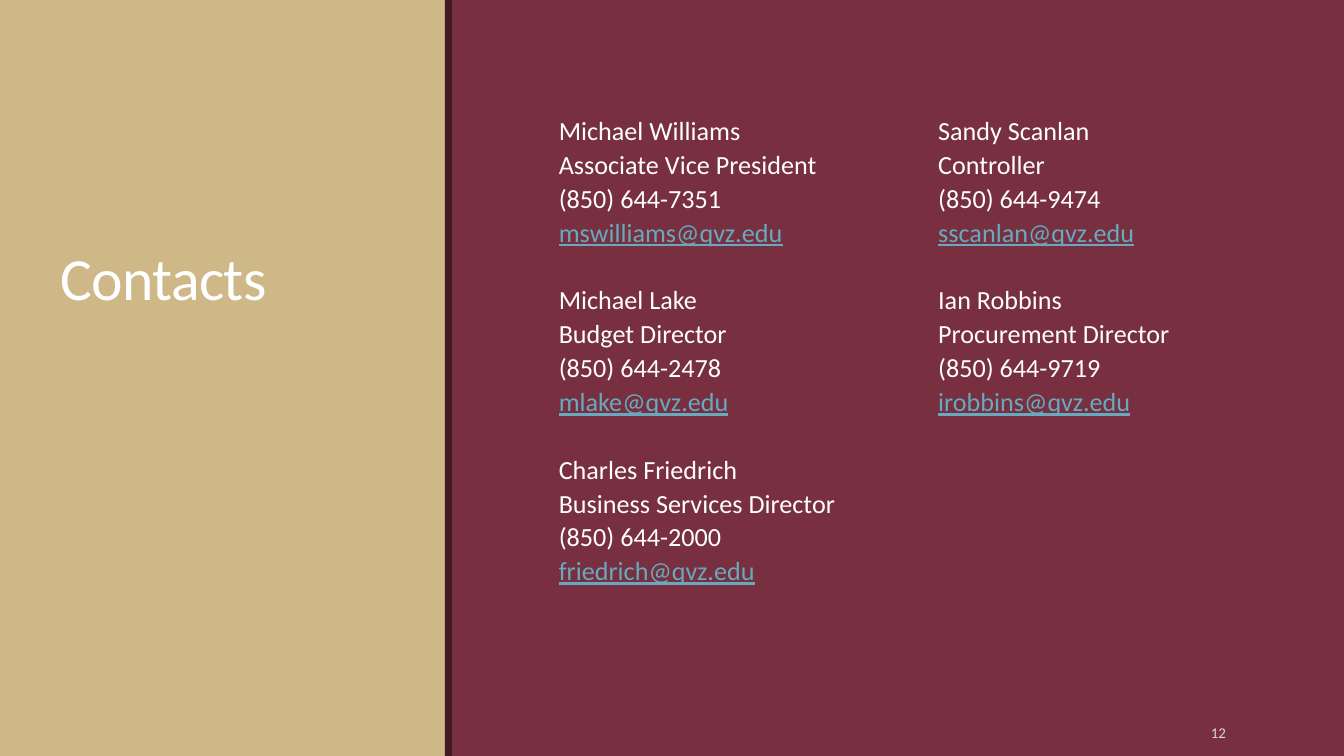
"""Build the contacts slide: a titled side panel beside a table of people."""
from pptx import Presentation
from pptx.dml.color import RGBColor
from pptx.enum.shapes import MSO_SHAPE
from pptx.enum.text import MSO_ANCHOR, PP_ALIGN
from pptx.oxml.ns import qn
from pptx.util import Cm, Pt
from lxml.etree import SubElement

TITLE = "Contacts"
NUMBER = "12"
PEOPLE = [
    [
        ("Michael Williams", "Associate Vice President", "(850) 644-7351", "mswilliams@qvz.edu"),
        ("Michael Lake", "Budget Director", "(850) 644-2478", "mlake@qvz.edu"),
        ("Charles Friedrich", "Business Services Director", "(850) 644-2000", "friedrich@qvz.edu"),
    ],
    [
        ("Sandy Scanlan", "Controller", "(850) 644-9474", "sscanlan@qvz.edu"),
        ("Ian Robbins", "Procurement Director", "(850) 644-9719", "irobbins@qvz.edu"),
    ],
]
THEME = {
    "font": "Calibri",
    "back": "782F40", "panel": "CEB888", "stripe": "421A24",
    "text": "FFFFFF", "link": "67AABF", "number": "D9D9DB",
    "title_size": 32, "body_size": 14, "number_size": 8,
}
WIDTH, HEIGHT = 25.4, 14.29
COLUMNS = (5.57, 1.6, 5.1)
ROW = 0.64
BLOCK = 5
PLAIN = "{2D5ABB26-0587-4C30-8999-92F81FD0307C}"


def color(name):
    """Return a theme colour."""
    return RGBColor.from_string(THEME[name])


def style(par, size, tint):
    """Format every run of a paragraph."""
    for run in par.runs:
        run.font.name = THEME["font"]
        run.font.size = Pt(THEME[size])
        run.font.color.rgb = color(tint)


def add_bar(slide, left, width, tint):
    """Add a full-height bar."""
    bar = slide.shapes.add_shape(MSO_SHAPE.RECTANGLE, Cm(left), 0, Cm(width), Cm(HEIGHT))
    bar.shadow.inherit = False
    bar.fill.solid()
    bar.fill.fore_color.rgb = color(tint)
    bar.line.fill.background()


def add_label(slide, text, place, size, tint, anchor, align):
    """Add a one-line text box and return its paragraph."""
    frame = slide.shapes.add_textbox(*map(Cm, place)).text_frame
    frame.word_wrap = True
    frame.vertical_anchor = anchor
    frame.margin_left = frame.margin_right = Cm(0.19)
    frame.margin_top = frame.margin_bottom = Cm(0.1)
    frame.text = text
    par = frame.paragraphs[0]
    par.alignment = align
    style(par, size, tint)
    return par


def add_table(slide, left, top):
    """Add the table of people, one block of rows for each person."""
    count = BLOCK * max(map(len, PEOPLE))
    frame = slide.shapes.add_table(
        count, len(COLUMNS), Cm(left), Cm(top), Cm(sum(COLUMNS)), Cm(ROW * count))
    table = frame.table
    table.first_row = table.horz_banding = False
    table._tbl.tblPr.find(qn("a:tableStyleId")).text = PLAIN
    for col, width in zip(table.columns, COLUMNS):
        col.width = Cm(width)
    for row in table.rows:
        row.height = Cm(ROW)
    for cell in table.iter_cells():
        cell.fill.background()
        cell.vertical_anchor = MSO_ANCHOR.BOTTOM
        cell.margin_left = cell.margin_right = cell.margin_top = Cm(0.02)
        cell.margin_bottom = 0
        end = SubElement(cell.text_frame.paragraphs[0]._p, qn("a:endParaRPr"))
        end.set("sz", str(THEME["body_size"] * 100))
    for side, group in enumerate(PEOPLE):
        for place, person in enumerate(group):
            for line, text in enumerate(person):
                frame = table.cell(place * BLOCK + line, side * 2).text_frame
                frame.text = text
                par = frame.paragraphs[0]
                mail = "@" in text
                style(par, "body_size", "link" if mail else "text")
                par.runs[0].font.underline = mail


def main():
    """Build and save the slide."""
    deck = Presentation()
    deck.slide_width, deck.slide_height = Cm(WIDTH), Cm(HEIGHT)
    slide = deck.slides.add_slide(deck.slide_layouts[6])
    slide.background.fill.solid()
    slide.background.fill.fore_color.rgb = color("back")
    add_bar(slide, 0, 8.43, "panel")
    add_bar(slide, 8.41, 0.13, "stripe")
    title = add_label(slide, TITLE, (0.96, 1.24, 6.96, 4.78), "title_size", "text",
                      MSO_ANCHOR.BOTTOM, PP_ALIGN.LEFT)
    title.line_spacing = 0.85
    title.runs[0].font._element.set("spc", "-40")
    add_label(slide, NUMBER, (20.62, 13.46, 2.74, 0.76), "number_size", "number",
              MSO_ANCHOR.MIDDLE, PP_ALIGN.RIGHT)
    add_table(slide, 10.54, 2.15)
    deck.save("out.pptx")


if __name__ == "__main__":
    main()
